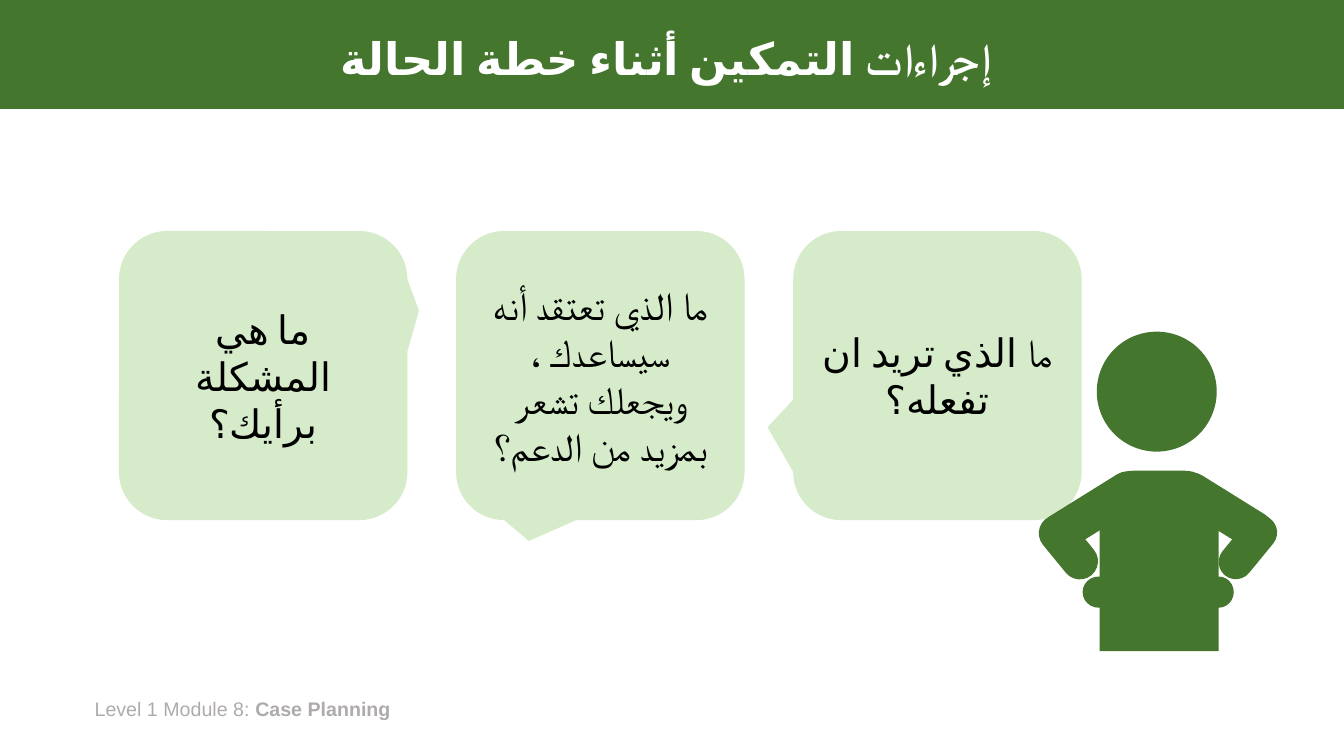
from lxml.etree import SubElement
from pptx import Presentation
from pptx.dml.color import RGBColor
from pptx.enum.shapes import MSO_SHAPE as Shape
from pptx.enum.text import MSO_ANCHOR as Anchor, PP_ALIGN as Align
from pptx.oxml.ns import qn
from pptx.util import Pt

GREEN = RGBColor(0x45, 0x76, 0x2D)
PALE_GREEN = RGBColor(0xD5, 0xEB, 0xC9)
GREY = RGBColor(0xAF, 0xAB, 0xAB)
WHITE = RGBColor(0xFF, 0xFF, 0xFF)
BLACK = RGBColor(0, 0, 0)

# Arabic text is a list of (text, font, language); the language steers the fallback font
TITLE = [
    (" ", "Arial", None),
    ("إجراءات", "Calibri", None),
    (" التمكين أثناء خطة الحالة", "Calibri", "ar"),
]
FOOTER = [("Level 1 Module 8: ", False), ("Case Planning", True)]

# question, side inset, callout tip as a share of the bubble's size from its centre
QUESTIONS = [
    ([("ما هي المشكلة برأيك؟", "Calibri", "ar")], 12, (0.54, -0.224)),
    ([("ما الذي تعتقد أنه سيساعدك ، ويجعلك تشعر بمزيد من الدعم؟", "Calibri", None)],
     7.2, (-0.248, 0.572)),
    ([("ما", "Calibri", None), (" الذي تريد ان تفعله؟", "Calibri", "ar")],
     7.2, (-0.589, 0.179)),
]
BUBBLE_LEFT, BUBBLE_TOP, BUBBLE_PITCH = 85, 165, 240.8
BUBBLE_WIDTH, BUBBLE_HEIGHT = 206, 206.5

# preset, (left, top, width, height), rotation, adjustments
ROUNDED, ROUND = Shape.ROUND_2_SAME_RECTANGLE, Shape.OVAL
PILL = (0.5, 0.5)
PERSON = [
    (ROUNDED, (785.5, 336.2, 85, 128.9), 0, (0.291, 0)),       # torso
    (ROUNDED, (860.4, 325.4, 27.4, 79.9), 301.9, PILL),        # right upper arm
    (ROUNDED, (879.1, 365, 24.5, 51.8), 219.3, PILL),          # right forearm
    (ROUND, (859.7, 411.8, 21.6, 22.3), 0, ()),                # right hand
    (ROUNDED, (767.5, 323.3, 27.4, 84.2), 58.1, PILL),         # left upper arm
    (ROUNDED, (750.2, 365, 25.9, 51.8), 140.7, PILL),          # left forearm
    (ROUND, (773.3, 411.8, 23, 22.3), 0, ()),                  # left hand
    (ROUND, (783.4, 236.9, 85.7, 85.7), 0, ()),                # head
]

deck = Presentation()
deck.slide_width, deck.slide_height = Pt(960), Pt(540)
page = deck.slides.add_slide(deck.slide_layouts[6])


def add_solid(preset, frame, color, adjustments=(), rotation=0):
    shape = page.shapes.add_shape(preset, *map(Pt, frame))
    shape.shadow.inherit = False
    shape.fill.solid()
    shape.fill.fore_color.rgb = color
    shape.line.fill.background()
    shape.rotation = rotation
    for index, value in enumerate(adjustments):
        shape.adjustments[index] = value
    return shape


def add_span(para, text, font, size, color, bold=False):
    span = para.add_run()
    span.text = text
    span.font.name, span.font.size, span.font.bold = font, Pt(size), bold
    span.font.color.rgb = color
    return span


def write_arabic(shape, spans, size, color, bold=False):
    """Fill a shape with one centred right-to-left paragraph."""
    frame = shape.text_frame
    frame.word_wrap = True
    frame.vertical_anchor = Anchor.MIDDLE
    para = frame.paragraphs[0]
    para.alignment = Align.CENTER
    para._p.get_or_add_pPr().set("rtl", "1")
    for text, font, language in spans:
        span = add_span(para, text, font, size, color, bold)
        properties = span._r.get_or_add_rPr()
        if language:
            properties.set("lang", language)
        SubElement(properties, qn("a:cs")).set("typeface", font)
    return para


add_solid(Shape.RECTANGLE, (0, 0, 960, 77.8), GREEN)

footer = page.shapes.add_textbox(Pt(60.5), Pt(494.6), Pt(327.6), Pt(24.5))
footer.text_frame.word_wrap = True
for text, bold in FOOTER:
    add_span(footer.text_frame.paragraphs[0], text, "Arial", 14, GREY, bold)

title = page.shapes.add_textbox(Pt(66.2), Pt(9.4), Pt(828), Pt(68.4))
write_arabic(title, TITLE, 32, WHITE, bold=True).line_spacing = 0.9

for column, (question, inset, tip) in enumerate(QUESTIONS):
    frame = (BUBBLE_LEFT + column * BUBBLE_PITCH, BUBBLE_TOP, BUBBLE_WIDTH, BUBBLE_HEIGHT)
    bubble = add_solid(Shape.ROUNDED_RECTANGULAR_CALLOUT, frame, PALE_GREEN, (*tip, 0.167))
    bubble.text_frame.margin_left = bubble.text_frame.margin_right = Pt(inset)
    write_arabic(bubble, question, 28, BLACK)

for preset, frame, rotation, adjustments in PERSON:
    add_solid(preset, frame, GREEN, adjustments, rotation)

deck.save("out.pptx")
